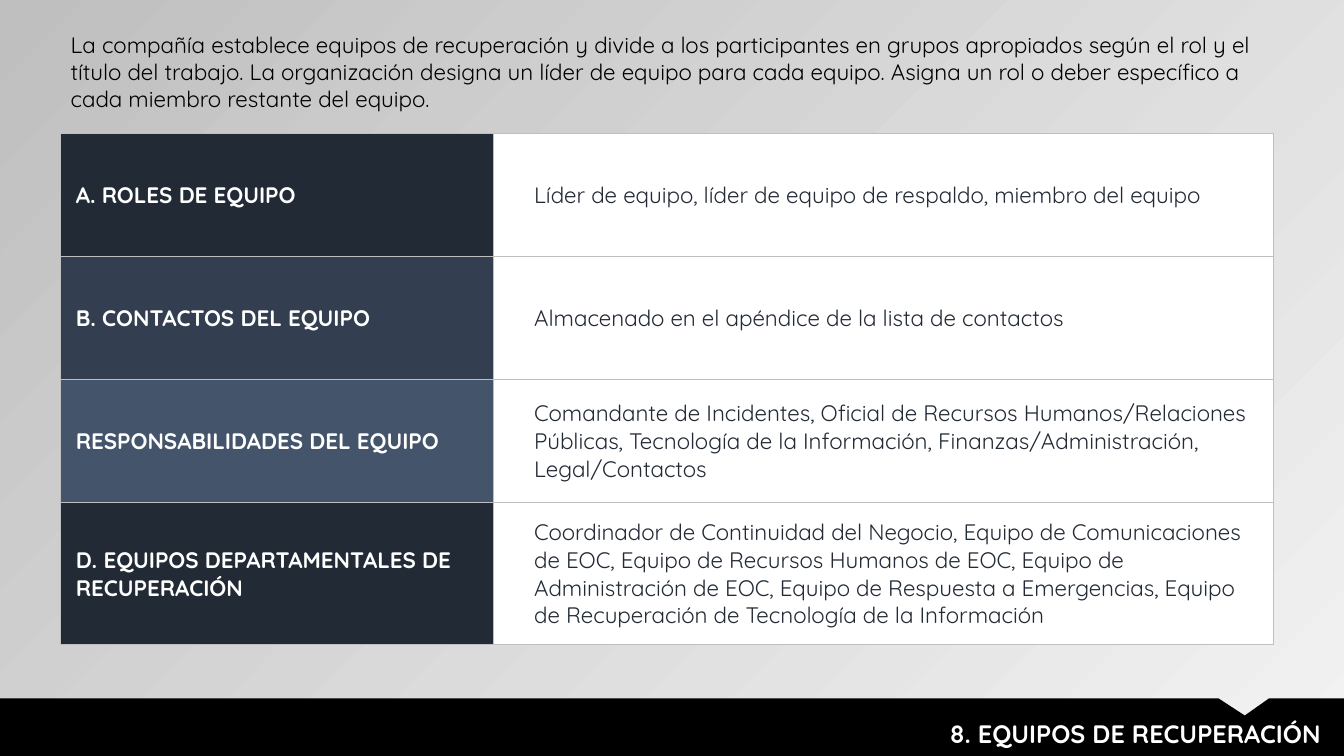
"""Build the slide on recovery teams: introduction, team table and footer band."""
from lxml import etree
from pptx import Presentation
from pptx.dml.color import RGBColor
from pptx.enum.text import MSO_ANCHOR, PP_ALIGN
from pptx.oxml.ns import qn
from pptx.util import Cm, Pt

MIDDLE = MSO_ANCHOR.MIDDLE
LEFT, RIGHT = PP_ALIGN.LEFT, PP_ALIGN.RIGHT
BLACK = RGBColor(0x00, 0x00, 0x00)
WHITE = RGBColor(0xFF, 0xFF, 0xFF)
PALE = RGBColor(0xF2, 0xF2, 0xF2)
GREY = RGBColor(0xBF, 0xBF, 0xBF)
NAVY = RGBColor(0x22, 0x2A, 0x35)
SLATE = RGBColor(0x33, 0x3F, 0x50)
STEEL = RGBColor(0x44, 0x54, 0x6A)

INTRO = (
    "La compañía establece equipos de recuperación y divide a los participantes en "
    "grupos apropiados según el rol y el título del trabajo. La organización designa "
    "un líder de equipo para cada equipo. Asigna un rol o deber específico a cada "
    "miembro restante del equipo."
)
TEAMS = [
    ("A. ROLES DE EQUIPO", NAVY,
     "Líder de equipo, líder de equipo de respaldo, miembro del equipo"),
    ("B. CONTACTOS DEL EQUIPO", SLATE,
     "Almacenado en el apéndice de la lista de contactos"),
    ("RESPONSABILIDADES DEL EQUIPO", STEEL,
     "Comandante de Incidentes, Oficial de Recursos Humanos/Relaciones Públicas, "
     "Tecnología de la Información, Finanzas/Administración, Legal/Contactos"),
    ("D. EQUIPOS DEPARTAMENTALES DE RECUPERACIÓN", NAVY,
     "Coordinador de Continuidad del Negocio, Equipo de Comunicaciones de EOC, "
     "Equipo de Recursos Humanos de EOC, Equipo de Administración de EOC, Equipo de "
     "Respuesta a Emergencias, Equipo de Recuperación de Tecnología de la Información"),
]


def write(frame, text, size, color, bold=False, align=LEFT):
    frame.word_wrap = True
    para = frame.paragraphs[0]
    para.text = text
    para.alignment = align
    para.font.name = "Quicksand"
    para.font.size = Pt(size)
    para.font.bold = bold
    para.font.color.rgb = color


def style_cell(cell, fill, inset):
    cell.fill.solid()
    cell.fill.fore_color.rgb = fill
    cell.vertical_anchor = MIDDLE
    cell.margin_left = Cm(inset)
    cell.margin_right = cell.margin_top = cell.margin_bottom = Cm(0.38)
    properties = cell._tc.get_or_add_tcPr()
    for position, side in enumerate(("lnL", "lnR", "lnT", "lnB")):
        border = etree.Element(qn(f"a:{side}"), w=str(Pt(1)))
        solid = etree.SubElement(border, qn("a:solidFill"))
        etree.SubElement(solid, qn("a:srgbClr"), val=str(GREY))
        properties.insert(position, border)


deck = Presentation()
deck.slide_width, deck.slide_height = Cm(33.87), Cm(19.05)
page = deck.slides.add_slide(deck.slide_layouts[6])

backdrop = page.background.fill
backdrop.gradient()
backdrop.gradient_angle = 135
for stop, position, color in zip(backdrop.gradient_stops, (0, 1), (PALE, GREY)):
    stop.position = position
    stop.color.rgb = color

table = page.shapes.add_table(
    len(TEAMS), 2, Cm(1.53), Cm(3.37), Cm(30.57), Cm(12.4)).table
table.first_row = table.horz_banding = False
table.columns[0].width, table.columns[1].width = Cm(10.91), Cm(19.66)
for row, (team, color, detail) in enumerate(TEAMS):
    table.rows[row].height = Cm(3.1)
    name_cell, detail_cell = table.cell(row, 0), table.cell(row, 1)
    style_cell(name_cell, color, 0.38)
    write(name_cell.text_frame, team, 16, WHITE, bold=True)
    style_cell(detail_cell, WHITE, 1.02)
    write(detail_cell.text_frame, detail, 16, NAVY)

outline = page.shapes.build_freeform(Cm(0), Cm(17.6))
outline.add_line_segments([
    (Cm(x), Cm(y)) for x, y in (
        (30.71, 17.6), (31.37, 18.03), (31.98, 17.6),
        (33.87, 17.6), (33.87, 19.05), (0, 19.05))
])
band = outline.convert_to_shape()
band.shadow.inherit = False
band.fill.solid()
band.fill.fore_color.rgb = BLACK
band.line.fill.background()

title_box = page.shapes.add_textbox(Cm(10.52), Cm(17.98), Cm(23.01), Cm(1.02))
write(title_box.text_frame, "8. EQUIPOS DE RECUPERACIÓN", 18, WHITE, bold=True, align=RIGHT)

intro_box = page.shapes.add_textbox(Cm(1.53), Cm(0.66), Cm(30.57), Cm(2.31))
write(intro_box.text_frame, INTRO, 16, BLACK)

deck.save("out.pptx")
